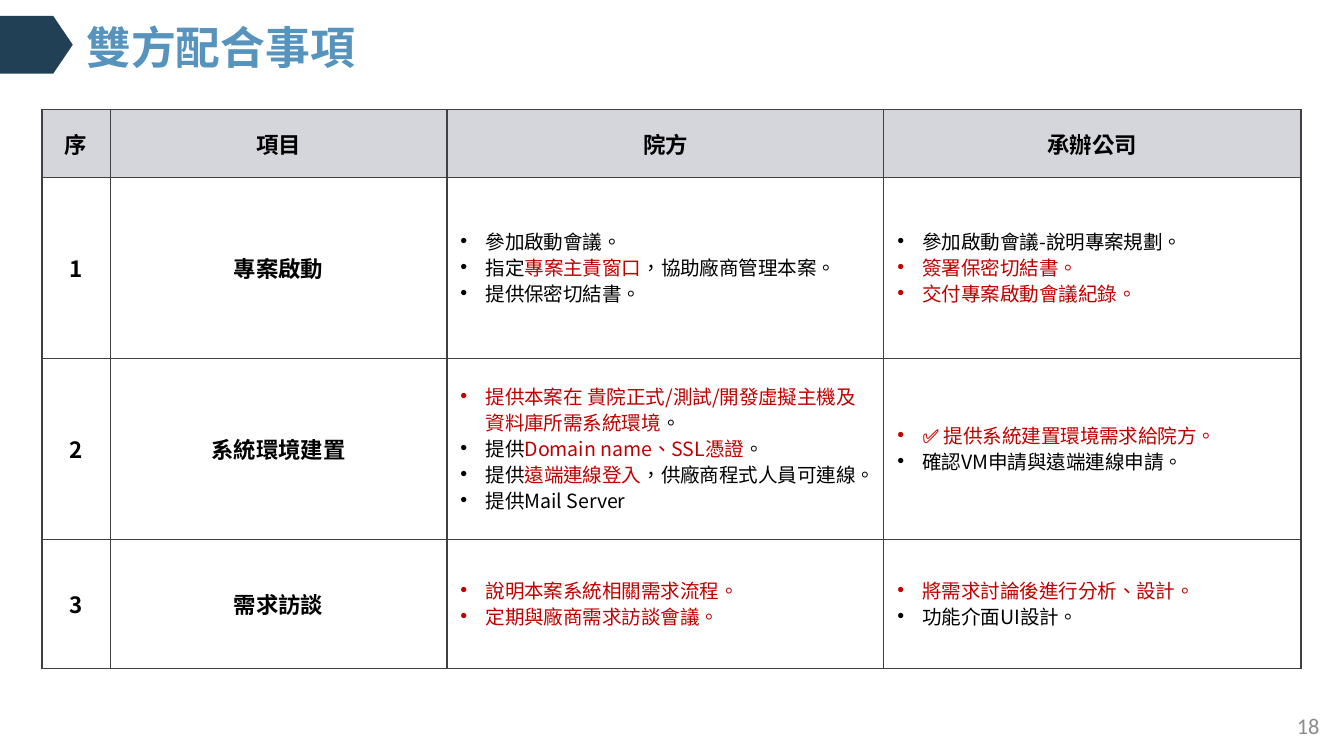
from dataclasses import dataclass
from typing import Optional

from lxml.etree import SubElement
from pptx import Presentation
from pptx.dml.color import RGBColor
from pptx.enum.text import MSO_ANCHOR as Anchor, PP_ALIGN as Align
from pptx.oxml import parse_xml
from pptx.oxml.ns import nsdecls, qn
from pptx.util import Pt

PX = 6350


@dataclass(frozen=True)
class Theme:
    sans: str = "Noto Sans CJK SC"
    sans_tc: str = "Noto Sans CJK TC"
    number_font: str = "Calibri"
    navy: str = "214055"
    blue: str = "5693BD"
    header: str = "D5D6DB"
    border: str = "404040"
    black: str = "000000"
    red: str = "C00000"
    grey: str = "8C8C8C"
    title_size: float = 24
    label_size: float = 12
    body_size: float = 10.5
    leading: float = 14


T = Theme()


@dataclass(frozen=True)
class Item:
    markup: str
    font: str = T.sans


@dataclass(frozen=True)
class Stage:
    name: str
    height: int
    hospital: list[Item]
    vendor: list[Item]


HEADERS = ["序", "項目", "院方", "承辦公司"]
COLUMNS = [73, 361, 468, 447]
HEADER_HEIGHT = 73
STAGES = [
    Stage("專案啟動", 194,
          [Item("參加啟動會議。"),
           Item("指定*專案主責窗口*，協助廠商管理本案。"),
           Item("提供保密切結書。")],
          [Item("參加啟動會議-說明專案規劃。"),
           Item("*簽署保密切結書。*"),
           Item("*交付專案啟動會議紀錄。*", T.sans_tc)]),
    Stage("系統環境建置", 194,
          [Item("*提供本案在 貴院正式/測試/開發虛擬主機及資料庫所需系統環境*。"),
           Item("提供*Domain name、SSL憑證*。"),
           Item("提供*遠端連線登入*，供廠商程式人員可連線。"),
           Item("提供Mail Server")],
          [Item("*✅ 提供系統建置環境需求給院方。*"),
           Item("確認VM申請與遠端連線申請。")]),
    Stage("需求訪談", 138,
          [Item("*說明本案系統相關需求流程。*"),
           Item("*定期與廠商需求訪談會議。*")],
          [Item("*將需求討論後進行分析、設計。*"),
           Item("功能介面UI設計。")]),
]


def px(*values: int) -> list[int]:
    return [v * PX for v in values]


def format_run(r, size: float, color: str, font: str = T.sans, bold: bool = False) -> None:
    r.font.size = Pt(size)
    r.font.bold = bold
    r.font.color.rgb = RGBColor.from_string(color)
    r.font.name = font
    rpr = r.font._element
    rpr.set("lang", "zh-TW")
    SubElement(rpr, qn("a:ea")).set("typeface", font)


def write_line(tf, text: str, align: Align, size: float, color: str,
               font: str = T.sans, bold: bool = False) -> None:
    tf.text = text
    p = tf.paragraphs[0]
    p.alignment = align
    format_run(p.runs[0], size, color, font, bold)


def write_items(tf, items: list[Item]) -> None:
    for i, item in enumerate(items):
        p = tf.paragraphs[0] if i == 0 else tf.add_paragraph()
        ppr = p._p.get_or_add_pPr()
        indent = 27 * PX
        ppr.set("marL", str(indent))
        ppr.set("indent", str(-indent))
        SubElement(ppr, qn("a:buFont")).set("typeface", "Arial")
        SubElement(ppr, qn("a:buChar")).set("char", "•")
        p.line_spacing = Pt(T.leading)
        p.alignment = Align.LEFT
        for n, part in enumerate(item.markup.split("*")):
            if part:
                r = p.add_run()
                r.text = part
                format_run(r, T.body_size, T.red if n % 2 else T.black, item.font)


def style_cell(cell, fill: Optional[str] = None) -> None:
    cell.vertical_anchor = Anchor.MIDDLE
    if fill:
        cell.fill.solid()
        cell.fill.fore_color.rgb = RGBColor.from_string(fill)
    else:
        cell.fill.background()
    tcpr = cell._tc.get_or_add_tcPr()
    for i, side in enumerate("LRTB"):
        tcpr.insert(i, parse_xml(
            f'<a:ln{side} {nsdecls("a")} w="{Pt(0.75)}"><a:solidFill>'
            f'<a:srgbClr val="{T.border}"/></a:solidFill></a:ln{side}>'))


def label_cell(cell, text: str, fill: Optional[str] = None) -> None:
    style_cell(cell, fill)
    write_line(cell.text_frame, text, Align.CENTER, T.label_size, T.black, bold=True)


def add_tag(slide) -> None:
    fb = slide.shapes.build_freeform(0, 17, scale=PX)
    fb.add_line_segments([(57, 17), (78, 48), (57, 79), (0, 79)], close=True)
    sp = fb.convert_to_shape()
    sp.shadow.inherit = False
    sp.fill.solid()
    sp.fill.fore_color.rgb = RGBColor.from_string(T.navy)
    sp.line.fill.background()


def add_title(slide, text: str) -> None:
    sp = slide.shapes.title
    sp.left, sp.top, sp.width, sp.height = px(78, 10, 1148, 88)
    tf = sp.text_frame
    tf.vertical_anchor = Anchor.MIDDLE
    write_line(tf, text, Align.LEFT, T.title_size, T.blue, bold=True)
    tf.paragraphs[0].line_spacing = 0.9


def add_duties(slide) -> None:
    heights = [HEADER_HEIGHT] + [s.height for s in STAGES]
    frame = slide.shapes.add_table(len(heights), len(COLUMNS),
                                   *px(45, 117, sum(COLUMNS), sum(heights)))
    table = frame.table
    table.first_row = table.horz_banding = False
    for column, width in zip(table.columns, COLUMNS):
        column.width = width * PX
    for row, height in zip(table.rows, heights):
        row.height = height * PX
    for c, text in enumerate(HEADERS):
        label_cell(table.cell(0, c), text, T.header)
    for n, stage in enumerate(STAGES, 1):
        label_cell(table.cell(n, 0), str(n))
        label_cell(table.cell(n, 1), stage.name)
        for c, items in enumerate((stage.hospital, stage.vendor), 2):
            cell = table.cell(n, c)
            style_cell(cell)
            write_items(cell.text_frame, items)


def add_page_number(slide, number: int) -> None:
    tf = slide.shapes.add_textbox(*px(1104, 756, 324, 43)).text_frame
    tf.word_wrap = True
    tf.vertical_anchor = Anchor.MIDDLE
    write_line(tf, str(number), Align.RIGHT, T.label_size, T.grey, T.number_font)


def main() -> None:
    prs = Presentation()
    prs.slide_width, prs.slide_height = px(1440, 810)
    slide = prs.slides.add_slide(prs.slide_layouts[5])
    add_tag(slide)
    add_title(slide, "雙方配合事項")
    add_duties(slide)
    add_page_number(slide, 18)
    prs.save("out.pptx")


if __name__ == "__main__":
    main()
